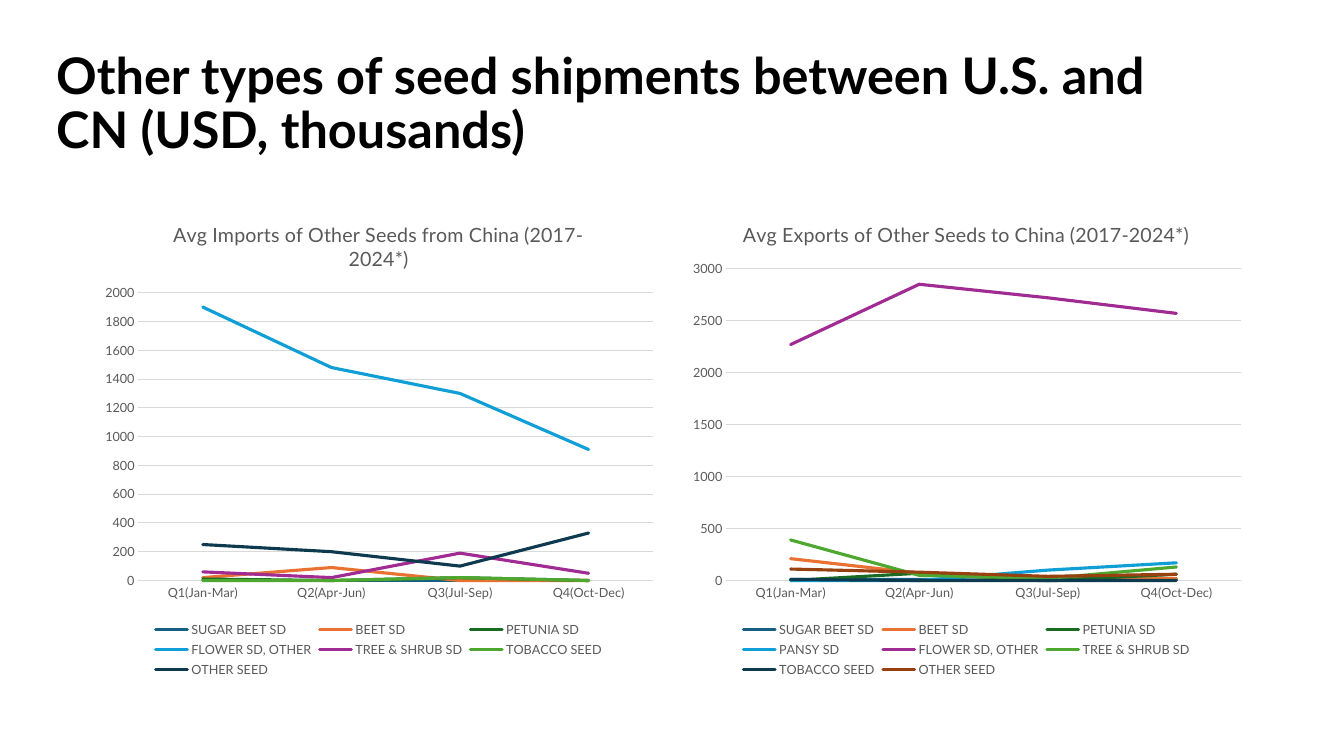
from lxml import etree
from pptx import Presentation
from pptx.chart.data import CategoryChartData
from pptx.dml.color import RGBColor
from pptx.enum.chart import XL_CHART_TYPE, XL_LEGEND_POSITION, XL_MARKER_STYLE, XL_TICK_MARK
from pptx.enum.text import MSO_ANCHOR
from pptx.oxml.ns import qn
from pptx.util import Inches, Pt

LINE = XL_CHART_TYPE.LINE
BOTTOM = XL_LEGEND_POSITION.BOTTOM
NO_MARKER = XL_MARKER_STYLE.NONE
NO_TICK = XL_TICK_MARK.NONE
MIDDLE = MSO_ANCHOR.MIDDLE

FONT = "Lato"
GRAY = "595959"
RULE = "D9D9D9"
PALETTE = ["156082", "E97132", "196B24", "0F9ED5", "A02B93", "4EA72E", "0D3A4E", "994010"]
QUARTERS = ["Q1(Jan-Mar)", "Q2(Apr-Jun)", "Q3(Jul-Sep)", "Q4(Oct-Dec)"]

IMPORTS = {
    "title": "Avg Imports of Other Seeds from China (2017-2024*)",
    "scale": {"minimum_scale": 0, "maximum_scale": 2000, "major_unit": 200},
    "plot_top": 0.19,
    "series": {
        "SUGAR BEET SD": [0, 0, 0, 0],
        "BEET SD": [20, 90, 0, 0],
        "PETUNIA SD": [10, 0, 20, 0],
        "FLOWER SD, OTHER": [1900, 1480, 1300, 910],
        "TREE & SHRUB SD": [60, 20, 190, 50],
        "TOBACCO SEED": [0, 0, 20, 0],
        "OTHER SEED": [250, 200, 100, 330],
    },
}
EXPORTS = {
    "title": "Avg Exports of Other Seeds to China (2017-2024*)",
    "scale": {"minimum_scale": 0, "maximum_scale": 3000, "major_unit": 500},
    "plot_top": 0.14,
    "series": {
        "SUGAR BEET SD": [10, 10, 0, 10],
        "BEET SD": [210, 70, 30, 20],
        "PETUNIA SD": [0, 70, 0, 60],
        "PANSY SD": [0, 0, 100, 170],
        "FLOWER SD, OTHER": [2270, 2850, 2720, 2570],
        "TREE & SHRUB SD": [390, 50, 20, 130],
        "TOBACCO SEED": [10, 0, 0, 0],
        "OTHER SEED": [110, 80, 40, 60],
    },
}


def color(value):
    return RGBColor.from_string(value)


def apply(target, values):
    for name, value in values.items():
        setattr(target, name, value)


def style_font(font, size, shade, bold=False):
    apply(font, {"name": FONT, "size": Pt(size), "bold": bold})
    font.color.rgb = color(shade)


def style_line(line, shade, width):
    line.color.rgb = color(shade)
    line.width = Pt(width)


def add_heading(page, box, text):
    shape = page.shapes.add_textbox(*map(Inches, box))
    frame = shape.text_frame
    apply(frame, {"word_wrap": True, "vertical_anchor": MIDDLE})
    para = frame.paragraphs[0]
    para.line_spacing = 0.9
    span = para.add_run()
    span.text = text
    style_font(span.font, 36, "000000", True)


def place_plot(chart, top):
    area = chart.element.find(".//" + qn("c:plotArea"))
    for old in area.findall(qn("c:layout")):
        area.remove(old)
    layout = etree.Element(qn("c:layout"))
    manual = etree.SubElement(layout, qn("c:manualLayout"))
    settings = {"layoutTarget": "inner", "xMode": "edge", "yMode": "edge",
                "x": 0.08, "y": top, "w": 0.9, "h": round(0.79 - top, 2)}
    for name, value in settings.items():
        etree.SubElement(manual, qn("c:" + name)).set("val", str(value))
    area.insert(0, layout)


def add_seed_chart(page, box, content):
    data = CategoryChartData()
    data.categories = QUARTERS
    for name, values in content["series"].items():
        data.add_series(name, values)
    chart = page.shapes.add_chart(LINE, *map(Inches, box), data).chart
    style_font(chart.font, 10, "000000")

    chart.has_title = True
    span = chart.chart_title.text_frame.paragraphs[0].add_run()
    span.text = content["title"]
    style_font(span.font, 14, GRAY)
    chart.chart_title.include_in_layout = False

    chart.has_legend = True
    apply(chart.legend, {"position": BOTTOM, "include_in_layout": False})
    style_font(chart.legend.font, 9, GRAY)

    for axis in (chart.category_axis, chart.value_axis):
        apply(axis, {"major_tick_mark": NO_TICK, "minor_tick_mark": NO_TICK})
        style_font(axis.tick_labels.font, 9, GRAY)
    style_line(chart.category_axis.format.line, RULE, 0.75)
    apply(chart.value_axis, content["scale"])
    chart.value_axis.format.line.fill.background()
    style_line(chart.value_axis.major_gridlines.format.line, RULE, 0.75)

    chart.plots[0].vary_by_categories = False
    for series, shade in zip(chart.plots[0].series, PALETTE):
        series.smooth = False
        series.marker.style = NO_MARKER
        style_line(series.format.line, shade, 2.25)
        series.format.line._get_or_add_ln().set("cap", "rnd")
    place_plot(chart, content["plot_top"])


def main():
    deck = Presentation()
    apply(deck, {"slide_width": Inches(13.33), "slide_height": Inches(7.5)})
    page = deck.slides.add_slide(deck.slide_layouts[6])
    add_heading(page, (0.46, 0.32, 11.5, 1.45),
                "Other types of seed shipments between U.S. and CN (USD, thousands)")
    for left, content in ((6.75, EXPORTS), (0.92, IMPORTS)):
        add_seed_chart(page, (left, 2, 5.67, 4.76), content)
    deck.save("out.pptx")


if __name__ == "__main__":
    main()
